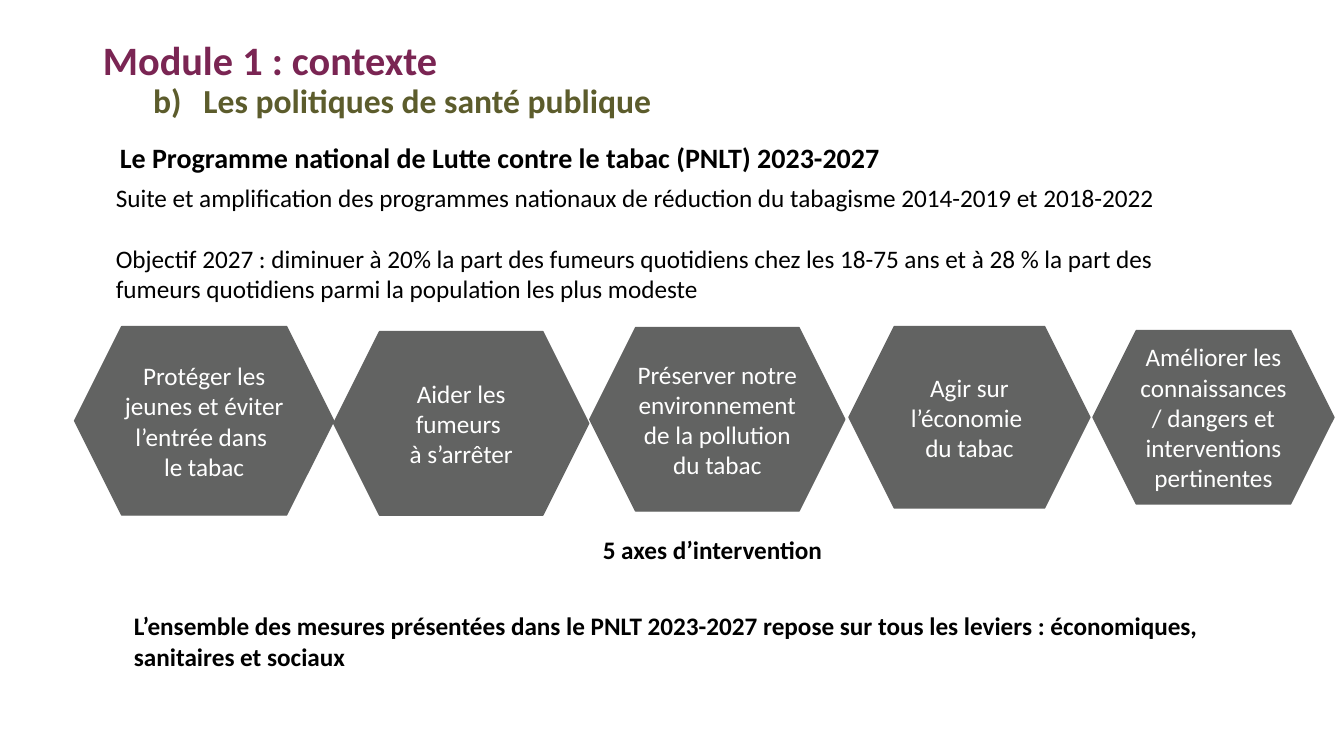
from lxml.etree import SubElement
from pptx import Presentation
from pptx.dml.color import RGBColor
from pptx.enum.shapes import MSO_SHAPE
from pptx.enum.text import MSO_ANCHOR, MSO_AUTO_SIZE, PP_ALIGN
from pptx.oxml.ns import qn
from pptx.util import Inches, Pt

COLORS = {"plum": "7A2553", "olive": "5C5C2C", "gray": "626362",
          "black": "000000", "white": "FFFFFF"}


class Deck:
    font = "Calibri"

    def __init__(self):
        self.prs = Presentation()
        self.prs.slide_width = Inches(13.33)
        self.prs.slide_height = Inches(7.5)
        self.s = self.prs.slides.add_slide(self.prs.slide_layouts[5])

    def color(self, name):
        return RGBColor.from_string(COLORS[name])

    def style(self, p, size, color, bold=False):
        for r in p.runs:
            r.font.name = self.font
            r.font.size = Pt(size)
            r.font.bold = bold
            r.font.color.rgb = self.color(color)

    def title(self, text, x, y, w, h):
        sp = self.s.shapes.title
        sp.left, sp.top, sp.width, sp.height = map(Inches, (x, y, w, h))
        tf = sp.text_frame
        tf.text = text
        tf.word_wrap = True
        tf.auto_size = MSO_AUTO_SIZE.NONE
        tf.vertical_anchor = MSO_ANCHOR.MIDDLE
        p = tf.paragraphs[0]
        p.alignment = PP_ALIGN.LEFT
        p.line_spacing = 0.7
        self.style(p, 28.8, "plum", True)

    def text(self, text, x, y, w, h, size=18, color="black", bold=False, gap=0):
        sp = self.s.shapes.add_textbox(*map(Inches, (x, y, w, h)))
        tf = sp.text_frame
        tf.word_wrap = True
        tf.text = text
        for p in tf.paragraphs:
            self.style(p, size, color, bold)
        for p in tf.paragraphs[1:]:
            p.space_before = Pt(gap)
        return tf

    def lettered(self, text, start, x, y, w, h):
        p = self.text(text, x, y, w, h, 24, "olive", True).paragraphs[0]
        p.line_spacing = 0.9
        pPr = p._p.get_or_add_pPr()
        pPr.set("marL", str(Inches(0.89)))
        pPr.set("indent", str(Inches(-0.5)))
        SubElement(pPr, qn("a:buAutoNum"), type="alphaLcParenR", startAt=str(start))

    def hexagon(self, text, x, y, w, h):
        sp = self.s.shapes.add_shape(MSO_SHAPE.HEXAGON, *map(Inches, (x, y, w, h)))
        sp.shadow.inherit = False
        sp.fill.solid()
        sp.fill.fore_color.rgb = self.color("gray")
        sp.line.color.rgb = self.color("gray")
        sp.line.width = Pt(1)
        tf = sp.text_frame
        tf.word_wrap = True
        tf.vertical_anchor = MSO_ANCHOR.MIDDLE
        tf.text = text
        p = tf.paragraphs[0]
        p.alignment = PP_ALIGN.CENTER
        self.style(p, 18, "white")


def main():
    deck = Deck()
    deck.title("Module 1 : contexte", 0.92, 0.4, 11.5, 0.49)
    deck.lettered("Les politiques de santé publique", 2, 1.03, 0.79, 11.5, 0.71)
    deck.text("Le Programme national de Lutte contre le tabac (PNLT) 2023-2027",
              1.09, 1.34, 11.5, 0.44, size=20, bold=True)
    deck.text("Suite et amplification des programmes nationaux de réduction du "
              "tabagisme 2014-2019 et 2018-2022\n"
              "Objectif 2027 : diminuer à 20% la part des fumeurs quotidiens chez "
              "les 18-75 ans et à 28 % la part des fumeurs quotidiens parmi la "
              "population les plus modeste",
              1.05, 1.76, 11.19, 1.31, gap=22)
    axes = [
        ("Protéger les jeunes et éviter l’entrée dans \vle tabac", 0.74, 3.24, 2.57, 1.87),
        ("Aider les fumeurs \và s’arrêter", 3.31, 3.29, 2.53, 1.82),
        ("Préserver notre environnement de la pollution du tabac", 5.85, 3.25, 2.53, 1.82),
        ("Agir sur l’économie \vdu tabac", 8.42, 3.24, 2.39, 1.8),
        ("Améliorer les connaissances / dangers et interventions pertinentes",
         10.84, 3.28, 2.39, 1.72),
    ]
    for axis in axes:
        deck.hexagon(*axis)
    deck.text("5 axes d’intervention", 5.88, 5.25, 2.61, 0.4, bold=True)
    deck.text("L’ensemble des mesures présentées dans le PNLT 2023-2027 repose sur "
              "tous les leviers : économiques, sanitaires et sociaux",
              1.23, 6.01, 11.3, 0.71, bold=True)
    deck.prs.save("out.pptx")


if __name__ == "__main__":
    main()
